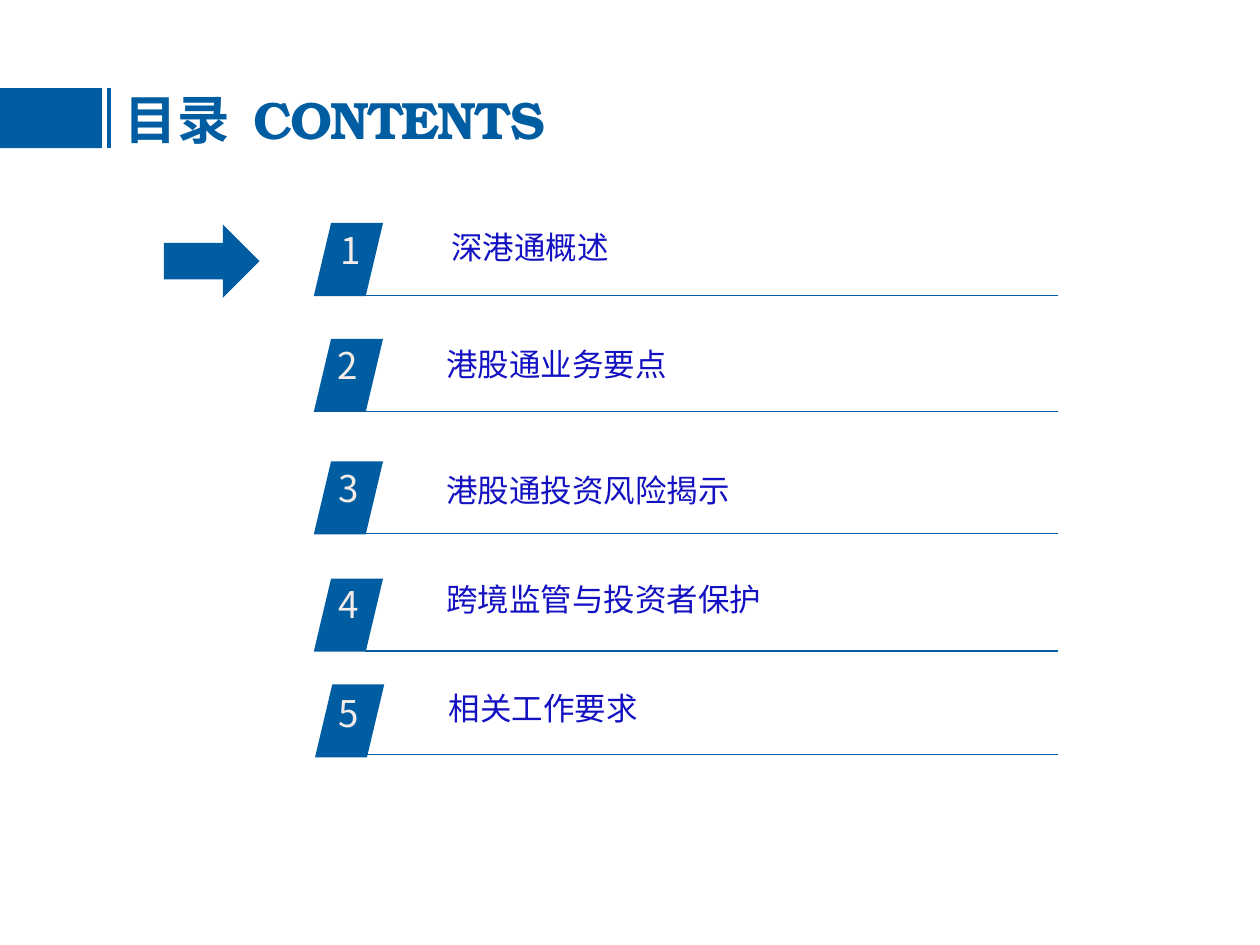
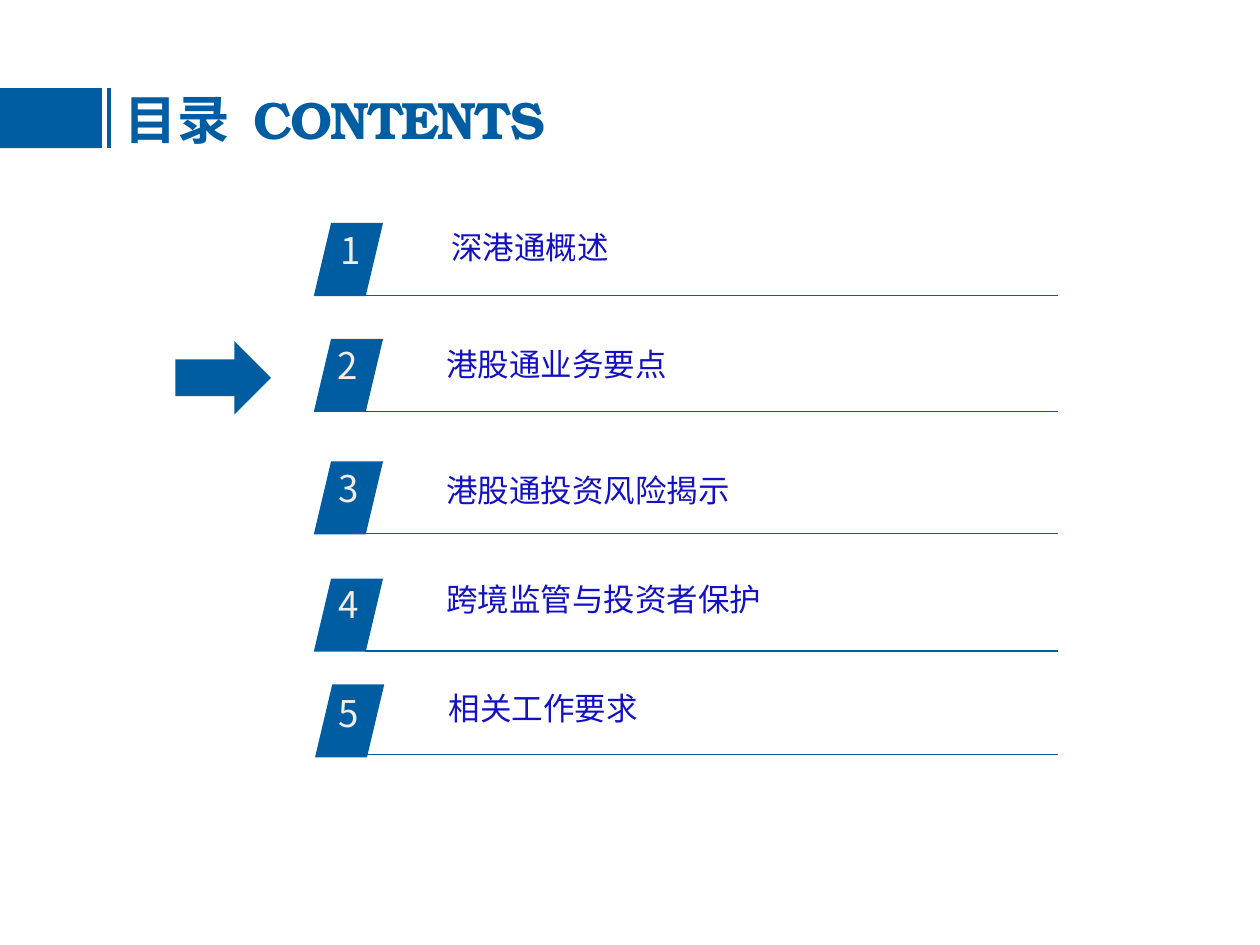
from lxml.etree import SubElement
from pptx import Presentation
from pptx.dml.color import RGBColor
from pptx.enum.shapes import MSO_CONNECTOR, MSO_SHAPE
from pptx.enum.text import MSO_ANCHOR, MSO_AUTO_SIZE, PP_ALIGN
from pptx.oxml.ns import qn
from pptx.util import Pt

COLORS = {"blue": "005DA2", "label": "1311C1", "number": "F4EDE7"}
SANS, SERIF = "Noto Sans CJK SC", "TeX Gyre Bonum"

# label, badge left and top, rule y, number left and top, label left and top, line spacing
ROWS = [
    ("深港通概述", 179.3, 127.4, 169, 180.7, 126.7, 252.7, 127.4, 1),
    ("港股通业务要点", 179.3, 193.6, 235, 179.3, 192.2, 249.8, 194.4, 1),
    ("港股通投资风险揭示", 179.3, 263.6, 305, 180, 262.8, 249.8, 255.6, 1.5),
    ("跨境监管与投资者保护", 179.3, 330.6, 372, 180, 329, 249.8, 329, 1),
    ("相关工作要求", 180, 391, 431.3, 180, 391, 251.3, 391, 1),
]
ARROWS = [(93.6, 128.3), (100.2, 195)]  # left and top, one per slide

prs = Presentation()
prs.slide_width, prs.slide_height = Pt(720), Pt(540)


def add_text(s, text, x, y, w, h, size=18, color="label", bold=False, wrap=True,
             align=PP_ALIGN.LEFT, anchor=MSO_ANCHOR.TOP, inset=(5.2, 2.7), spacing=1):
    """Text is a string, or a list of (text, font, character spacing)."""
    tf = s.shapes.add_textbox(Pt(x), Pt(y), Pt(w), Pt(h)).text_frame
    tf.word_wrap, tf.vertical_anchor = wrap, anchor
    tf.auto_size = MSO_AUTO_SIZE.SHAPE_TO_FIT_TEXT
    tf.margin_left = tf.margin_right = Pt(inset[0])
    tf.margin_top = tf.margin_bottom = Pt(inset[1])
    p = tf.paragraphs[0]
    p.alignment, p.line_spacing = align, spacing
    for part, font, tracking in [(text, SANS, 0)] if isinstance(text, str) else text:
        r = p.add_run()
        r.text = part
        r.font.size, r.font.bold = Pt(size), bold
        r.font.color.rgb = RGBColor.from_string(COLORS[color])
        r.font.name = font
        rpr = r.font._element
        SubElement(rpr, qn("a:ea")).set("typeface", font)
        if tracking:
            rpr.set("spc", str(round(tracking * 100)))


def add_blue(s, kind, x, y, w, h, weight=None):
    """Add a filled shape, or a line when a weight is given."""
    blue = RGBColor.from_string(COLORS["blue"])
    if weight:
        c = s.shapes.add_connector(kind, Pt(x), Pt(y), Pt(x + w), Pt(y + h))
        c.line.color.rgb, c.line.width = blue, Pt(weight)
        SubElement(c._element.spPr, qn("a:effectLst"))
        return
    sp = s.shapes.add_shape(kind, Pt(x), Pt(y), Pt(w), Pt(h))
    sp.shadow.inherit = False
    sp.fill.solid()
    sp.fill.fore_color.rgb = blue
    sp.line.fill.background()


for arrow_x, arrow_y in ARROWS:
    s = prs.slides.add_slide(prs.slide_layouts[6])

    # Title band
    add_blue(s, MSO_SHAPE.RECTANGLE, 0, 50.4, 58.3, 34.2)
    add_blue(s, MSO_CONNECTOR.STRAIGHT, 62.4, 50.4, 0, 34.2, weight=2.25)
    title = [("目录", SANS, 0), (" ", SANS, 6.7), ("CONTENTS", SERIF, -1.1)]
    add_text(s, title, 66.2, 46.8, 260, 41.8, size=30, color="blue", bold=True,
             anchor=MSO_ANCHOR.MIDDLE)

    # Contents rows
    for i, (label, x, y, rule_y, num_x, num_y, label_x, label_y, spacing) in enumerate(ROWS, 1):
        add_blue(s, MSO_CONNECTOR.STRAIGHT, 208.8, rule_y, 395.6, 0, weight=0.75)
        add_blue(s, MSO_SHAPE.PARALLELOGRAM, x, y, 39.6, 41.8)
        add_text(s, str(i), num_x, num_y, 38.9, 32.4, size=21, color="number",
                 align=PP_ALIGN.CENTER, inset=(7.2, 3.6))
        add_text(s, label, label_x, label_y, 18 * len(label) + 11.5,
                 27.4 if spacing == 1 else 38.2, wrap=False, spacing=spacing)

    # Arrow at the current section
    add_blue(s, MSO_SHAPE.RIGHT_ARROW, arrow_x, arrow_y, 54.7, 41.8)

prs.save("out.pptx")
